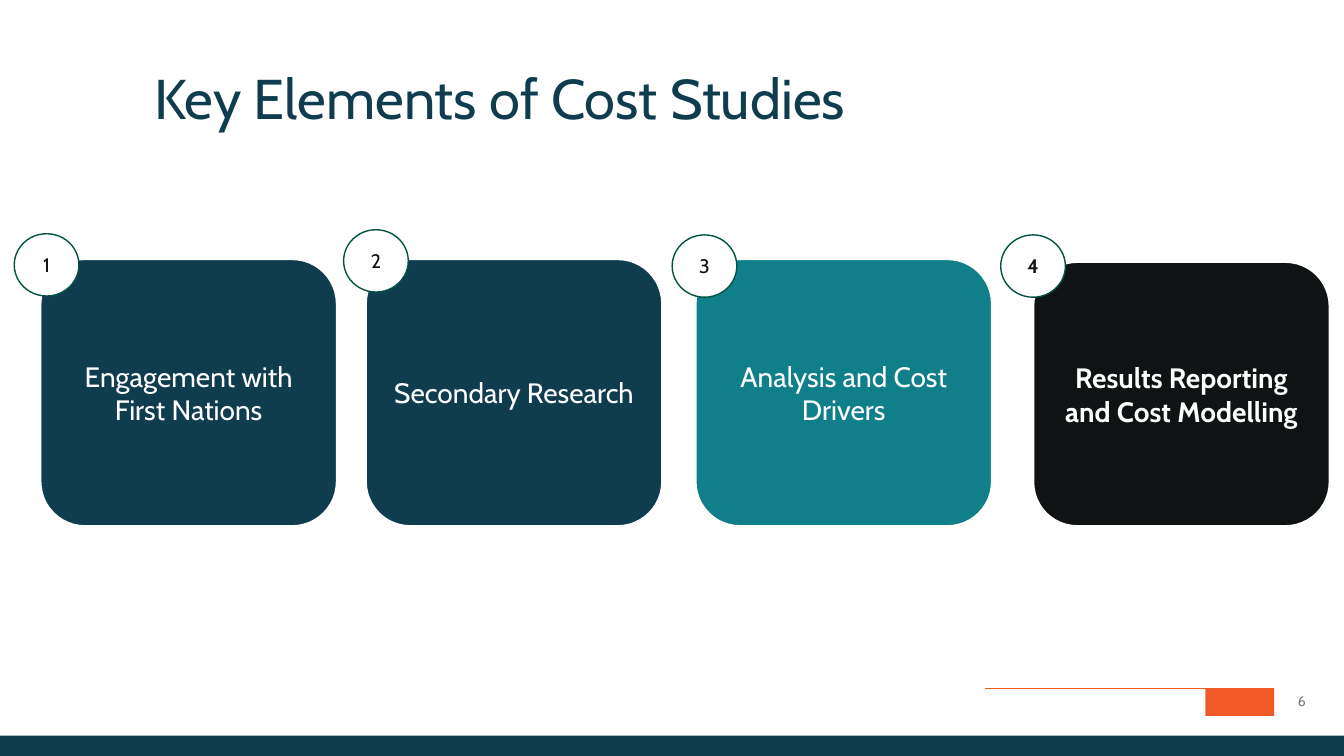
from dataclasses import dataclass

from lxml import etree
from pptx import Presentation
from pptx.dml.color import RGBColor
from pptx.enum.shapes import MSO_CONNECTOR, MSO_SHAPE
from pptx.enum.text import MSO_ANCHOR, PP_ALIGN
from pptx.oxml.ns import qn
from pptx.util import Cm, Pt

ROUNDED = MSO_SHAPE.ROUNDED_RECTANGLE
OVAL = MSO_SHAPE.OVAL
RECTANGLE = MSO_SHAPE.RECTANGLE
STRAIGHT = MSO_CONNECTOR.STRAIGHT
TOP, MIDDLE = MSO_ANCHOR.TOP, MSO_ANCHOR.MIDDLE
LEFT, CENTER = PP_ALIGN.LEFT, PP_ALIGN.CENTER


@dataclass(frozen=True)
class Theme:
    font: str = "Cabin"
    navy: str = "0F3C4F"
    teal: str = "107F8A"
    black: str = "0F1313"
    white: str = "FFFFFF"
    orange: str = "EF5A27"
    green: str = "035244"
    gray: str = "797979"
    title_size: int = 40
    card_size: int = 20
    badge_size: int = 14
    number_size: int = 10


THEME = Theme()
CARD_WIDTH, CARD_BOTTOM = 7.47, 13.26
BADGE_WIDTH, BADGE_HEIGHT = 1.63, 1.57

# label, fill, card left, card top, badge left, badge top, bold
STEPS = [
    ("Engagement with First Nations", THEME.navy, 1.02, 6.53, 0.36, 5.89, False),
    ("Secondary Research", THEME.navy, 9.22, 6.53, 8.66, 5.79, False),
    ("Analysis and Cost Drivers", THEME.teal, 17.53, 6.53, 16.94, 5.92, False),
    ("Results Reporting and Cost Modelling", THEME.black, 26.04, 6.6, 25.22, 5.92, True),
]


def color(value):
    return RGBColor.from_string(value)


def write(shape, text, size, text_color, align=CENTER, bold=False, anchor=MIDDLE):
    frame = shape.text_frame
    frame.word_wrap = True
    frame.vertical_anchor = anchor
    paragraph = frame.paragraphs[0]
    paragraph.alignment = align
    run = paragraph.add_run()
    run.text = text
    run.font.name = THEME.font
    run.font.size = Pt(size)
    run.font.bold = bold
    run.font.color.rgb = color(text_color)
    return paragraph


def add_block(slide, kind, box, fill, outline=None, width=1.0):
    shape = slide.shapes.add_shape(kind, *map(Cm, box))
    shape.shadow.inherit = False
    shape.fill.solid()
    shape.fill.fore_color.rgb = color(fill)
    if outline:
        shape.line.color.rgb = color(outline)
        shape.line.width = Pt(width)
    else:
        shape.line.fill.background()
    return shape


def add_label(slide, box, text, size, text_color, vertical_inset=0.13, **style):
    """Add a text box without side insets and return its paragraph."""
    label = slide.shapes.add_textbox(*map(Cm, box))
    frame = label.text_frame
    frame.margin_left = frame.margin_right = 0
    frame.margin_top = frame.margin_bottom = Cm(vertical_inset)
    return write(label, text, size, text_color, **style)


def add_rule(slide, left, right, y):
    rule = slide.shapes.add_connector(STRAIGHT, Cm(left), Cm(y), Cm(right), Cm(y))
    rule.line.color.rgb = color(THEME.orange)
    rule.line.width = Pt(1)
    etree.SubElement(rule._element.spPr, qn("a:effectLst"))


def add_step(slide, number, step):
    label, fill, left, top, badge_left, badge_top, bold = step
    card_box = (left, top, CARD_WIDTH, CARD_BOTTOM - top)
    card = add_block(slide, ROUNDED, card_box, fill, THEME.white, 1.5)
    write(card, label, THEME.card_size, THEME.white, bold=bold)
    badge_box = (badge_left, badge_top, BADGE_WIDTH, BADGE_HEIGHT)
    badge = add_block(slide, OVAL, badge_box, THEME.white, THEME.green)
    write(badge, str(number), THEME.badge_size, THEME.black, bold=bold)


def add_footer(slide):
    add_block(slide, RECTANGLE, (30.38, 17.35, 1.73, 0.69), THEME.orange)
    add_rule(slide, 24.82, 32.11, 17.35)
    add_block(slide, RECTANGLE, (0, 18.54, 33.87, 0.51), THEME.navy)
    add_label(slide, (32.11, 17.32, 1.4, 0.69), "6", THEME.number_size, THEME.gray)


def main():
    presentation = Presentation()
    presentation.slide_width = Cm(33.87)
    presentation.slide_height = Cm(19.05)
    slide = presentation.slides.add_slide(presentation.slide_layouts[6])

    add_footer(slide)
    title = add_label(slide, (3.89, 1.8, 28.09, 1.55), "Key Elements of Cost Studies",
                      THEME.title_size, THEME.navy, vertical_inset=0,
                      align=LEFT, anchor=TOP)
    title.line_spacing = 0.9
    for number, step in enumerate(STEPS, start=1):
        add_step(slide, number, step)

    presentation.save("out.pptx")


if __name__ == "__main__":
    main()
